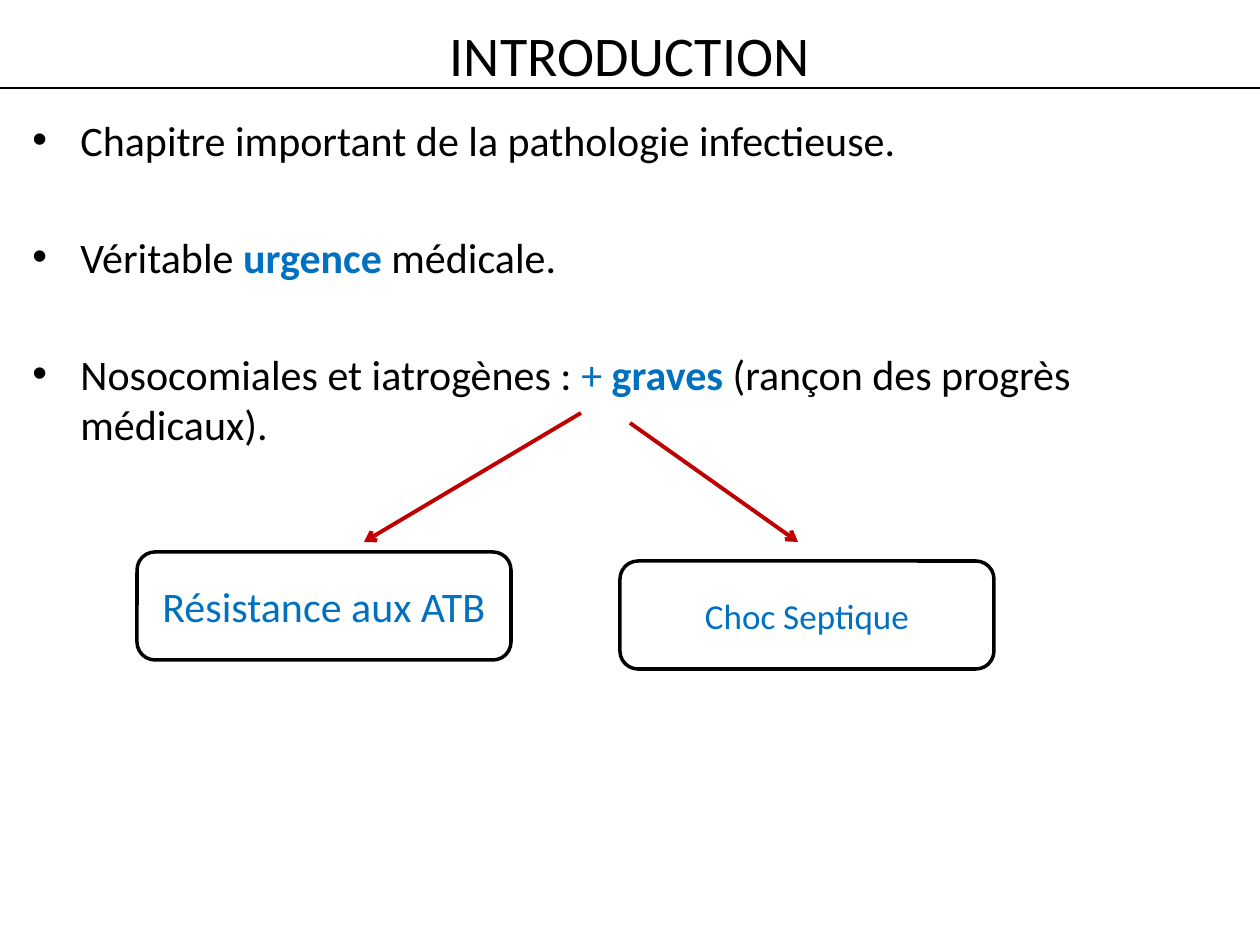
"""Build the introduction slide with its key points and two consequences."""
from lxml import etree
from pptx import Presentation
from pptx.dml.color import RGBColor as RGB
from pptx.enum.shapes import MSO_CONNECTOR as Link, MSO_SHAPE as Shape
from pptx.enum.text import MSO_ANCHOR as Anchor, PP_ALIGN as Align
from pptx.oxml.ns import qn
from pptx.util import Emu, Pt

PX = 914400 // 126
BLACK, WHITE, BLUE, RED = "000000", "FFFFFF", "0070C0", "C00000"
FONT = "Calibri"
TITLE = "INTRODUCTION"
POINTS = [
    [("Chapitre important de la pathologie infectieuse.", BLACK, False)],
    [("Véritable ", BLACK, False), ("urgence ", BLUE, True),
     ("médicale.", BLACK, False)],
    [("Nosocomiales et iatrogènes : ", BLACK, False), ("+ ", BLUE, False),
     ("graves ", BLUE, True), ("(rançon des progrès médicaux).", BLACK, False)],
]
BOXES = [("Résistance aux ATB", 24, 137, 552), ("Choc Septique", 20, 620, 561)]
BOX_W, BOX_H = 374, 108
RULE = (0, 88, 1260, 88)
ARROWS = [(581, 413, 364, 542), (630, 423, 798, 542)]
INDENT, GAP = 48, 38


def px(*nums):
    return [Emu(n * PX) for n in nums]


def color(code):
    return RGB.from_string(code)


def style(font, size, code=BLACK):
    font.name, font.size = FONT, Pt(size)
    font.color.rgb = color(code)


def add_title(slide):
    title = slide.shapes.title
    title.left, title.top, title.width, title.height = px(10, 10, 1240, 88)
    frame = title.text_frame
    frame.text = TITLE
    frame.vertical_anchor = Anchor.MIDDLE
    para = frame.paragraphs[0]
    para.alignment = Align.CENTER
    style(para.font, 32)


def add_points(slide):
    frame = slide.shapes.add_textbox(*px(20, 108, 1221, 816)).text_frame
    frame.word_wrap = True
    for i, runs in enumerate(POINTS):
        para = frame.add_paragraph() if i else frame.paragraphs[0]
        para.space_before = Pt(GAP if i else 0)
        style(para.font, 24)
        props = para._p.get_or_add_pPr()
        props.set("marL", str(INDENT * PX))
        props.set("indent", str(-INDENT * PX))
        font = etree.Element(qn("a:buFont"), typeface="Arial")
        mark = etree.Element(qn("a:buChar"), char="•")
        props.find(qn("a:defRPr")).addprevious(font)
        font.addnext(mark)
        for text, code, bold in runs:
            run = para.add_run()
            run.text = text
            style(run.font, 24, code)
            run.font.bold = bold


def add_box(slide, text, size, left, top):
    box = slide.shapes.add_shape(Shape.ROUNDED_RECTANGLE,
                                 *px(left, top, BOX_W, BOX_H))
    box.shadow.inherit = False
    box.fill.solid()
    box.fill.fore_color.rgb = color(WHITE)
    box.line.color.rgb = color(BLACK)
    box.line.width = Pt(2)
    frame = box.text_frame
    frame.text = text
    frame.word_wrap = True
    frame.vertical_anchor = Anchor.MIDDLE
    para = frame.paragraphs[0]
    para.alignment = Align.CENTER
    style(para.font, size, BLUE)


def add_line(slide, ends, code, width, head=False):
    line = slide.shapes.add_connector(Link.STRAIGHT, *px(*ends))
    line.line.color.rgb = color(code)
    line.line.width = Pt(width)
    if head:
        etree.SubElement(line.line._get_or_add_ln(), qn("a:tailEnd"), type="arrow")
    etree.SubElement(line._element.spPr, qn("a:effectLst"))


def main():
    deck = Presentation()
    deck.slide_width, deck.slide_height = px(1260, 945)
    slide = deck.slides.add_slide(deck.slide_layouts[5])
    add_title(slide)
    add_points(slide)
    add_line(slide, RULE, BLACK, 1.5)
    for box in BOXES:
        add_box(slide, *box)
    for ends in ARROWS:
        add_line(slide, ends, RED, 2.25, head=True)
    deck.save("out.pptx")


if __name__ == "__main__":
    main()
